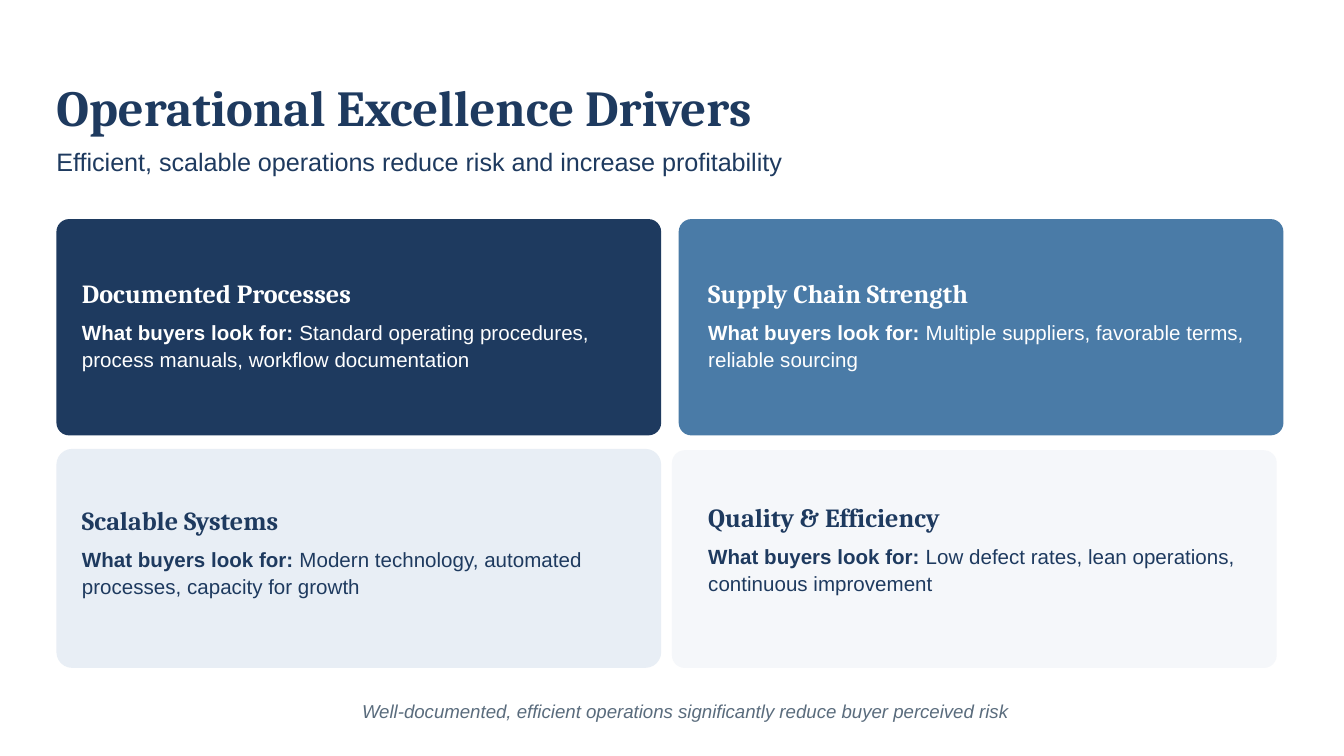
from dataclasses import dataclass

from pptx import Presentation
from pptx.dml.color import RGBColor
from pptx.enum.shapes import MSO_SHAPE
from pptx.enum.text import MSO_ANCHOR, MSO_AUTO_SIZE, PP_ALIGN
from pptx.util import Inches, Pt

ROUNDED = MSO_SHAPE.ROUNDED_RECTANGLE
TOP = MSO_ANCHOR.TOP
NO_AUTOFIT = MSO_AUTO_SIZE.NONE
LEFT, CENTER = PP_ALIGN.LEFT, PP_ALIGN.CENTER
TITLE_ONLY = 5


@dataclass(frozen=True)
class Theme:
    """Colours, fonts and type sizes of the deck."""

    navy: str = "1E3A5F"
    blue: str = "4A7BA7"
    ice: str = "E8EEF5"
    mist: str = "F5F7FA"
    white: str = "FFFFFF"
    slate: str = "5A6C7D"
    heading_font: str = "Cambria"
    body_font: str = "Arial"
    title_size: float = 27
    subtitle_size: float = 13.5
    heading_size: float = 14
    body_size: float = 11
    note_size: float = 10


THEME = Theme()


@dataclass(frozen=True)
class Card:
    """One driver: its panel, its text position and its wording."""

    panel: tuple
    corner: float
    fill: str
    ink: str
    text_left: float
    text_top: float
    text_width: float
    heading: str
    detail: str


CARDS = [
    Card((0.42, 1.63, 4.5, 1.61), 0.059, THEME.navy, THEME.white, 0.61, 2.11, 4.09,
         "Documented Processes",
         "Standard operating procedures, process manuals, workflow documentation"),
    Card((0.42, 3.34, 4.5, 1.63), 0.072, THEME.ice, THEME.navy, 0.61, 3.8, 4.09,
         "Scalable Systems",
         "Modern technology, automated processes, capacity for growth"),
    Card((5.05, 1.63, 4.5, 1.61), 0.059, THEME.blue, THEME.white, 5.27, 2.11, 4.03,
         "Supply Chain Strength",
         "Multiple suppliers, favorable terms, reliable sourcing"),
    Card((5, 3.35, 4.5, 1.62), 0.059, THEME.mist, THEME.navy, 5.27, 3.78, 4.03,
         "Quality & Efficiency",
         "Low defect rates, lean operations, continuous improvement"),
]


def write_text(box, text, *, size, color, leading, font=THEME.body_font, lead_in="",
               bold=False, italic=False, align=LEFT, after=0):
    """Fill a box with one paragraph, opened by an optional bold lead-in."""
    frame = box.text_frame
    frame.word_wrap = True
    frame.auto_size = NO_AUTOFIT
    frame.vertical_anchor = TOP
    frame.margin_left = frame.margin_top = frame.margin_right = frame.margin_bottom = 0
    para = frame.paragraphs[0]
    para.alignment = align
    para.line_spacing = Pt(leading)
    para.space_before = Pt(0)
    para.space_after = Pt(after)
    for words, heavy in ((lead_in, True), (text, bold)):
        if words:
            span = para.add_run()
            span.text = words
            span.font.name = font
            span.font.size = Pt(size)
            span.font.bold = heavy
            span.font.italic = italic
            span.font.color.rgb = RGBColor.from_string(color)


def add_text(page, place, text, **style):
    """Add a text box at left, top, width, height."""
    box = page.shapes.add_textbox(*map(Inches, place))
    write_text(box, text, **style)


def add_title(page, place, text, **style):
    """Move the title placeholder into place and fill it."""
    title = page.shapes.title
    title.left, title.top, title.width, title.height = map(Inches, place)
    write_text(title, text, **style)


def add_panel(page, card):
    """Draw the rounded background of a card."""
    panel = page.shapes.add_shape(ROUNDED, *map(Inches, card.panel))
    panel.adjustments[0] = card.corner
    panel.shadow.inherit = False
    panel.fill.solid()
    panel.fill.fore_color.rgb = RGBColor.from_string(card.fill)
    panel.line.fill.background()


def add_card(page, card):
    """Draw a card with its heading and what buyers look for."""
    add_panel(page, card)
    add_text(page, (card.text_left, card.text_top, card.text_width, 0.19), card.heading,
             size=THEME.heading_size, color=card.ink, font=THEME.heading_font,
             bold=True, leading=13.5, after=4.5)
    add_text(page, (card.text_left, card.text_top + 0.25, card.text_width, 0.41),
             f" {card.detail}", lead_in="What buyers look for:",
             size=THEME.body_size, color=card.ink, leading=14.6)


def main():
    """Build the slide and save it."""
    deck = Presentation()
    deck.slide_width = Inches(10)
    deck.slide_height = deck.slide_width * 9 // 16
    page = deck.slides.add_slide(deck.slide_layouts[TITLE_ONLY])
    page.background.fill.solid()
    page.background.fill.fore_color.rgb = RGBColor.from_string(THEME.white)
    add_title(page, (0.42, 0.6, 6.8, 0.42), "Operational Excellence Drivers",
              size=THEME.title_size, color=THEME.navy, font=THEME.heading_font,
              bold=True, leading=30, after=6)
    add_text(page, (0.42, 1.02, 9.35, 0.29),
             "Efficient, scalable operations reduce risk and increase profitability",
             size=THEME.subtitle_size, color=THEME.navy, leading=21, after=9)
    for card in CARDS:
        add_card(page, card)
    add_text(page, (0.42, 5.18, 9.35, 0.19),
             "Well-documented, efficient operations significantly reduce buyer perceived risk",
             size=THEME.note_size, color=THEME.slate, leading=14, italic=True, align=CENTER)
    deck.save("out.pptx")


if __name__ == "__main__":
    main()
